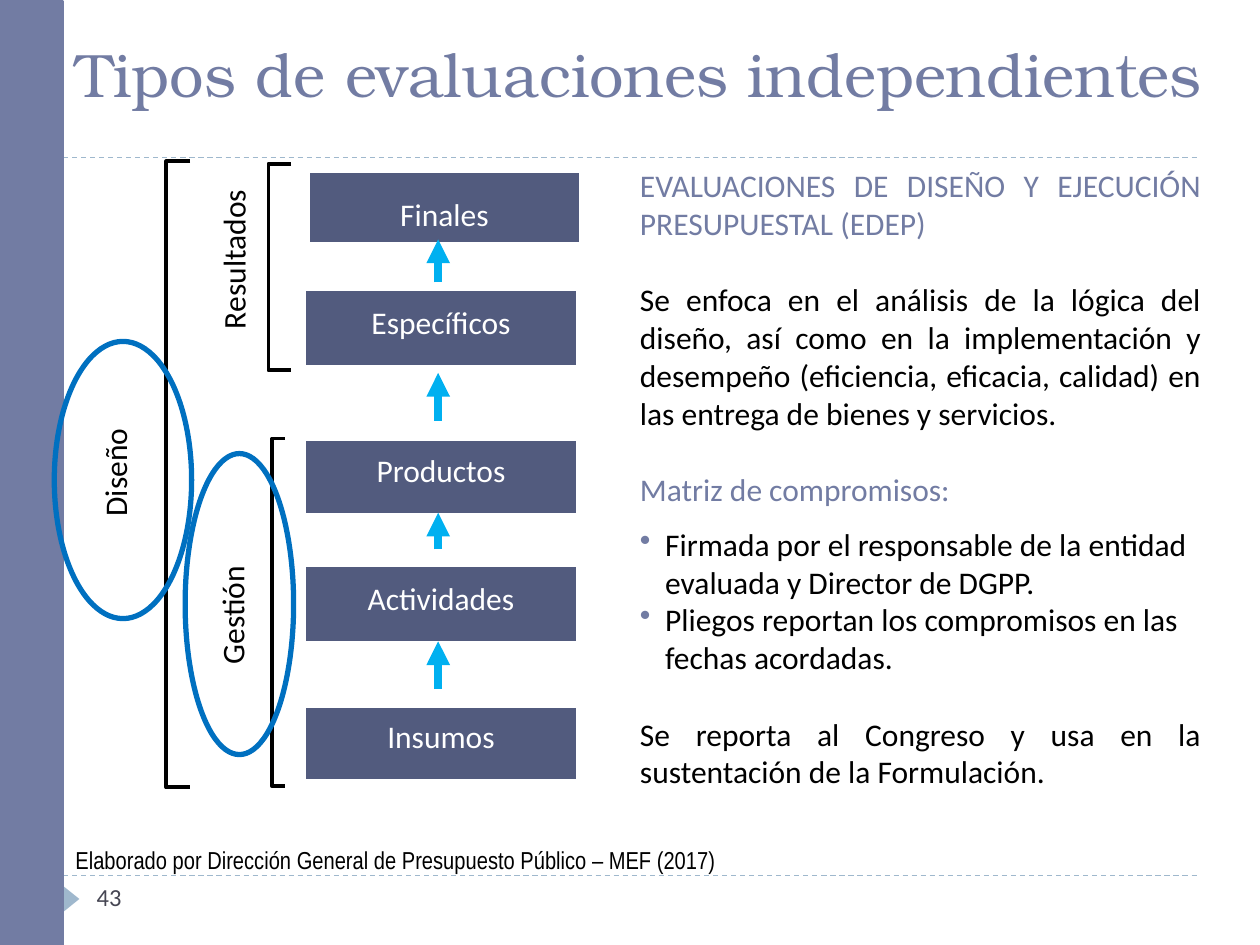
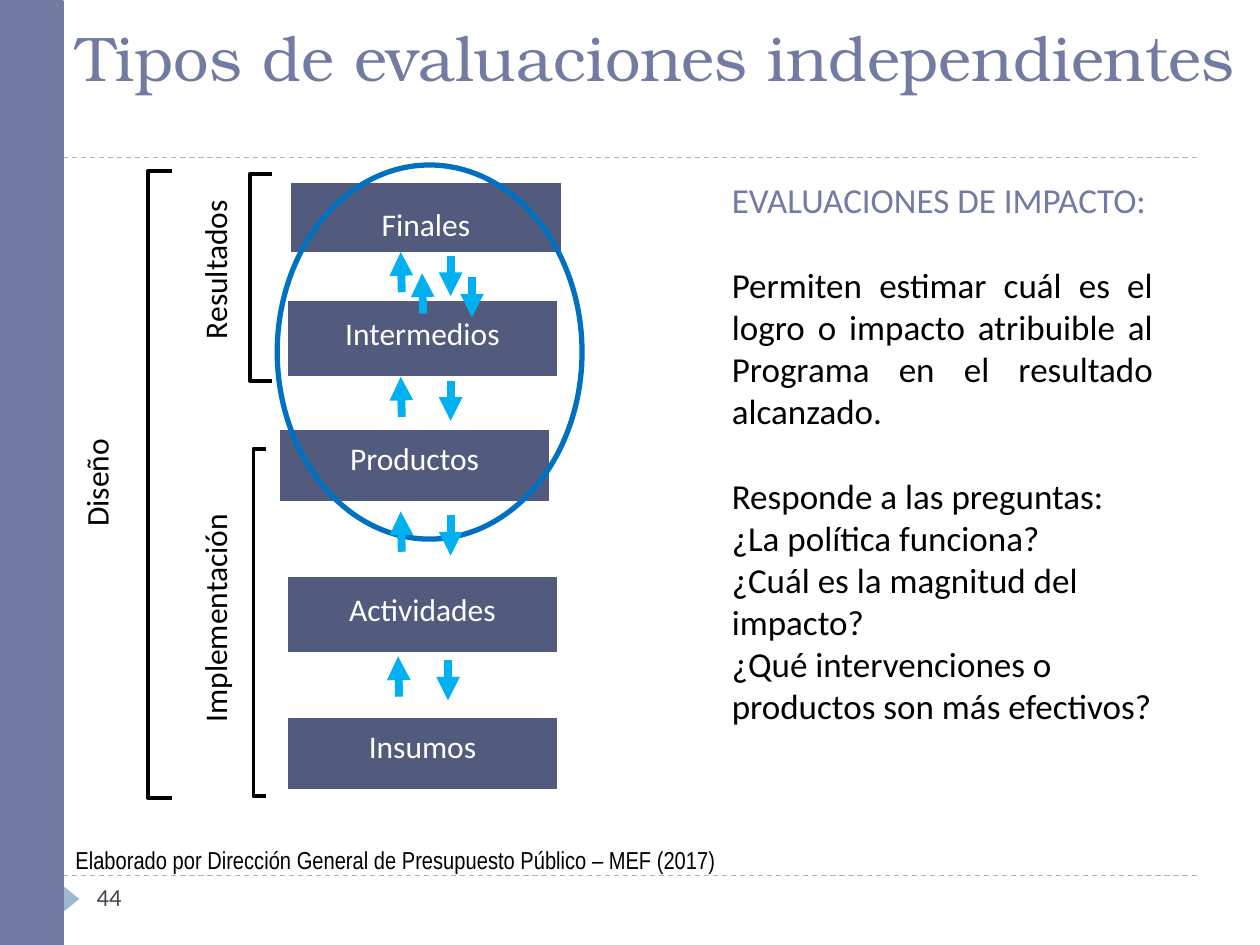
from lxml.etree import SubElement
from pptx import Presentation
from pptx.dml.color import RGBColor
from pptx.enum.dml import MSO_LINE
from pptx.enum.shapes import MSO_CONNECTOR, MSO_SHAPE
from pptx.enum.text import MSO_ANCHOR, MSO_AUTO_SIZE, PP_ALIGN
from pptx.oxml.ns import qn
from pptx.util import Pt

TITLE = "Tipos de evaluaciones independientes"
SOURCE = "Elaborado por Dirección General de Presupuesto Público – MEF (2017)"
BODY_FONT, TITLE_FONT, SOURCE_FONT = "Calibri", "TeX Gyre Bonum", "Arial Narrow"
SLATE, NAVY, PALE, GREY = "727CA3", "525B7E", "9FB8CD", "464653"
SKY, BLUE, BLACK, WHITE = "00B0F0", "0070C0", "000000", "FFFFFF"

# Chain of results, shared by both slides: left, top, height, space under the label
STEP_WIDTH = 154
STEPS = [
    (177, 98.6, 39.6, 5),
    (175, 166.3, 42.5, 13.5),
    (175, 252, 41, 13.5),
    (175, 324, 42.5, 13.5),
    (175, 404.6, 40.3, 13.5),
]
# Left, top, right, bottom
BRACKETS = [
    (153.4, 93.6, 166.3, 211.7),
    (155.5, 250.6, 162.7, 449.3),
    (95, 92.2, 108.7, 450),
]
LABEL_HEIGHT = 27

# Paragraphs: text, colour, space before, style.  Side labels: text, centre x, centre y, length
PAGES = [
    {
        "number": "43",
        "title": (36, 10.8, 689, 55.4, 35),
        "shift": (0, 0),
        "steps": ["Finales", "Específicos", "Productos", "Actividades", "Insumos"],
        "nudges": {},
        "labels": [("Resultados", 134.3, 153.7, 104.4), ("Gestión", 133.6, 352, 71.3),
                   ("Diseño", 66.6, 273.6, 71.3)],
        "ellipses": [(31, 195.1, 78.5, 158.4), (105.8, 259.2, 62, 172)],
        "arrows": [((250.4, start), (250.4, end)) for start, end in
                   [(161.3, 136.8), (240.5, 213.1), (313.9, 293), (393.8, 366.5)]],
        "body": (358.6, 91.4, 334.8, 399.6, 18),
        "paragraphs": [
            ("EVALUACIONES DE DISEÑO Y EJECUCIÓN PRESUPUESTAL (EDEP)", SLATE, 0, "justify"),
            ("Se enfoca en el análisis de la lógica del diseño, así como en la implementación "
             "y desempeño (eficiencia, eficacia, calidad) en las entrega de bienes y servicios.",
             BLACK, 22, "justify"),
            ("Matriz de compromisos:", SLATE, 22, "justify"),
            ("Firmada por el responsable de la entidad evaluada y Director de DGPP.",
             BLACK, 9.8, "bullet"),
            ("Pliegos reportan los compromisos en las fechas acordadas.", BLACK, 0, "bullet"),
            ("Se reporta al Congreso y usa en la sustentación de la Formulación.",
             BLACK, 22, "justify"),
        ],
    },
    {
        "number": "44",
        "title": (36.7, 2.2, 683.3, 55.4, 36),
        "shift": (-10.6, 5.8),
        "steps": ["Finales", "Intermedios", "Productos", "Actividades", "Insumos"],
        "nudges": {"Productos": (-4.5, -12.3)},
        "labels": [("Resultados", 134.3, 153.7, 104.4), ("Implementación", 134.3, 351.7, 141.8),
                   ("Diseño", 66.6, 273.6, 71.3)],
        "ellipses": [(158.4, 94.3, 174.2, 213.8)],
        # Each pair: one arrow up, one down
        "arrows": [arrow for x, y in
                   [(229, 144), (241.2, 156.2), (229, 215.3), (229, 292.3), (227.5, 375.1)]
                   for arrow in [((x + 0.6, y + 23), (x, y)),
                                 ((x + 28.5, y + 2.2), (x + 28.5, y + 25.2))]],
        "body": (411.1, 98.6, 254.9, 346.3, 20),
        "paragraphs": [
            ("EVALUACIONES DE IMPACTO:", SLATE, 0, "left"),
            ("Permiten estimar cuál es el logro o impacto atribuible al Programa en el "
             "resultado alcanzado.", BLACK, 24.4, "justify"),
            ("Responde a las preguntas:", BLACK, 24.4, "justify"),
            ("¿La política funciona?", BLACK, 0, "left"),
            ("¿Cuál es la magnitud del impacto?", BLACK, 0, "left"),
            ("¿Qué intervenciones o productos son más efectivos?", BLACK, 0, "left"),
        ],
    },
]


def color(hex_code):
    return RGBColor.from_string(hex_code)


def format_paragraph(para, size, hex_code, font=BODY_FONT, align=PP_ALIGN.LEFT):
    para.alignment = align
    for span in para.runs:
        span.font.name = font
        span.font.size = Pt(size)
        span.font.color.rgb = color(hex_code)


def paint(shape, fill=None, line=None, width=1):
    shape.shadow.inherit = False
    if fill:
        shape.fill.solid()
        shape.fill.fore_color.rgb = color(fill)
    else:
        shape.fill.background()
    if line:
        shape.line.color.rgb = color(line)
        shape.line.width = Pt(width)
    else:
        shape.line.fill.background()


def add_figure(page, kind, frame, **style):
    shape = page.shapes.add_shape(kind, *map(Pt, frame))
    paint(shape, **style)
    return shape


def add_text(page, frame, text, size, hex_code, font=BODY_FONT, align=PP_ALIGN.LEFT):
    box = page.shapes.add_textbox(*map(Pt, frame))
    box.text_frame.word_wrap = True
    box.text_frame.text = text
    format_paragraph(box.text_frame.paragraphs[0], size, hex_code, font, align)
    return box


def add_line(page, start, end, hex_code, width):
    line = page.shapes.add_connector(MSO_CONNECTOR.STRAIGHT, *map(Pt, (*start, *end)))
    line.line.color.rgb = color(hex_code)
    line.line.width = Pt(width)
    SubElement(line._element.spPr, qn("a:effectLst"))
    return line


def add_arrow(page, start, end):
    arrow = add_line(page, start, end, SKY, 4.5)
    SubElement(arrow.line._get_or_add_ln(), qn("a:tailEnd"), type="triangle")


def add_frame(page, number):
    """Draw the side band, dashed rules, page marker and source line."""
    for y in (500.4, 90):
        add_line(page, (36, y), (684, y), PALE, 0.75).line.dash_style = MSO_LINE.DASH
    marker = add_figure(page, MSO_SHAPE.ISOSCELES_TRIANGLE, (33.1, 509, 15.1, 9.4), fill=PALE)
    marker.rotation = 90
    add_figure(page, MSO_SHAPE.RECTANGLE, (0, 0.7, 36, 539.3), fill=SLATE, line=SLATE, width=1.5)
    add_text(page, (48.2, 500.4, 156, 28.8), number, 14, GREY)
    add_text(page, (36, 479.5, 408, 24.5), SOURCE, 14, BLACK, SOURCE_FONT)


def set_title(page, left, top, width, height, size):
    title = page.shapes.title
    title.left, title.top, title.width, title.height = map(Pt, (left, top, width, height))
    frame = title.text_frame
    frame.text = TITLE
    frame.word_wrap = True
    frame.auto_size = MSO_AUTO_SIZE.NONE
    frame.vertical_anchor = MSO_ANCHOR.BOTTOM
    format_paragraph(frame.paragraphs[0], size, SLATE, TITLE_FONT)


def add_step(page, name, left, top, height, space_under):
    step = add_figure(page, MSO_SHAPE.ACTION_BUTTON_CUSTOM, (left, top, STEP_WIDTH, height),
                      fill=NAVY)
    frame = step.text_frame
    frame.text = name
    frame.vertical_anchor = MSO_ANCHOR.BOTTOM
    frame.margin_top, frame.margin_bottom = 0, Pt(space_under)
    frame.paragraphs[0].line_spacing = 0.9
    format_paragraph(frame.paragraphs[0], 18, WHITE, align=PP_ALIGN.CENTER)


def add_bracket(page, left, top, right, bottom):
    builder = page.shapes.build_freeform(Pt(right), Pt(top))
    corners = [(left, top), (left, bottom), (right, bottom)]
    builder.add_line_segments([(Pt(x), Pt(y)) for x, y in corners], close=False)
    paint(builder.convert_to_shape(), line=BLACK, width=2.25)


def add_side_label(page, text, center_x, center_y, length):
    """Add a label that reads upwards."""
    frame = (center_x - length / 2, center_y - LABEL_HEIGHT / 2, length, LABEL_HEIGHT)
    label = add_text(page, frame, text, 18, BLACK, align=PP_ALIGN.RIGHT)
    label.rotation = 270
    label.text_frame.vertical_anchor = MSO_ANCHOR.BOTTOM
    label.text_frame.paragraphs[0].line_spacing = 0.9


def add_bullet(para):
    properties = para._p.get_or_add_pPr()
    properties.set("marL", str(Pt(14.4)))
    properties.set("indent", str(-Pt(14.4)))
    SubElement(SubElement(properties, qn("a:buClr")), qn("a:srgbClr"), val=SLATE)
    SubElement(properties, qn("a:buChar"), char="•")


def add_body(page, left, top, width, height, size, paragraphs):
    box = page.shapes.add_textbox(*map(Pt, (left, top, width, height)))
    frame = box.text_frame
    frame.word_wrap = True
    for index, (text, hex_code, space, style) in enumerate(paragraphs):
        para = frame.add_paragraph() if index else frame.paragraphs[0]
        para.text = text
        para.space_before = Pt(space)
        align = PP_ALIGN.JUSTIFY if style == "justify" else PP_ALIGN.LEFT
        format_paragraph(para, size, hex_code, align=align)
        if style == "bullet":
            add_bullet(para)


def add_diagram(page, content):
    dx, dy = content["shift"]
    for name, (left, top, height, space) in zip(content["steps"], STEPS):
        nudge_x, nudge_y = content["nudges"].get(name, (0, 0))
        add_step(page, name, left + dx + nudge_x, top + dy + nudge_y, height, space)
    for left, top, right, bottom in BRACKETS:
        add_bracket(page, left + dx, top + dy, right + dx, bottom + dy)
    for text, x, y, length in content["labels"]:
        add_side_label(page, text, x + dx, y + dy, length)
    for frame in content["ellipses"]:
        add_figure(page, MSO_SHAPE.OVAL, frame, line=BLUE, width=3)
    for start, end in content["arrows"]:
        add_arrow(page, start, end)


def main():
    deck = Presentation()
    deck.slide_width, deck.slide_height = Pt(720), Pt(540)
    for content in PAGES:
        page = deck.slides.add_slide(deck.slide_layouts[5])
        add_frame(page, content["number"])
        set_title(page, *content["title"])
        add_body(page, *content["body"], content["paragraphs"])
        add_diagram(page, content)
    deck.save("out.pptx")


if __name__ == "__main__":
    main()
